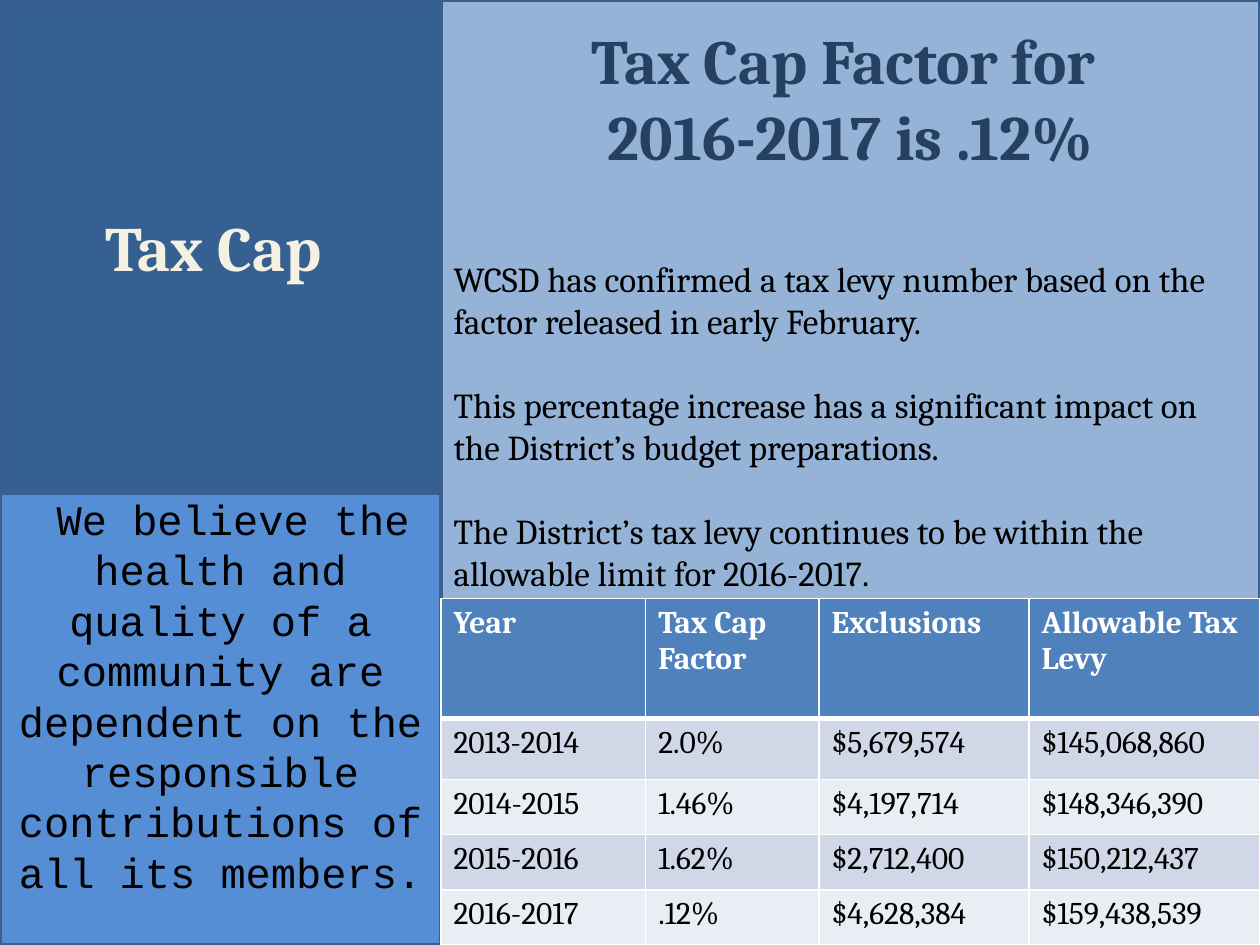
from lxml.etree import SubElement
from pptx import Presentation
from pptx.dml.color import RGBColor
from pptx.enum.shapes import MSO_SHAPE
from pptx.enum.text import MSO_ANCHOR, MSO_AUTO_SIZE, PP_ALIGN
from pptx.oxml.ns import qn
from pptx.util import Pt

COLORS = {
    "navy": "376092",
    "sky": "95B3D7",
    "blue": "558ED5",
    "outline": "3A5F8C",
    "cream": "F4F1E3",
    "heading": "254061",
    "text": "000000",
    "white": "FFFFFF",
    "header": "4F81BD",
    "odd_row": "D0D8E8",
    "even_row": "E9EDF4",
}
SERIF = "Cambria"
MONOSPACE = "Courier New"

HEADING = ["Tax Cap Factor for ", "2016-2017 is .12%"]
STATEMENTS = [
    "WCSD has confirmed a tax levy number based on the factor released in early February.",
    "This percentage increase has a significant impact on the District’s budget preparations.",
    "The District’s tax levy continues to be within the allowable limit for 2016-2017.",
]
BELIEF = (
    " We believe the health and quality of a community are dependent on the "
    "responsible contributions of all its members."
)
LEVY_ROWS = [
    ["Year", "Tax Cap Factor", "Exclusions", "Allowable Tax Levy"],
    ["2013-2014", "2.0%", "$5,679,574", "$145,068,860"],
    ["2014-2015", "1.46%", "$4,197,714", "$148,346,390"],
    ["2015-2016", "1.62%", "$2,712,400", "$150,212,437"],
    ["2016-2017", ".12%", "$4,628,384", "$159,438,539"],
]
COLUMN_WIDTHS = [117, 99, 120, 132]
ROW_HEIGHTS = [68.5, 35, 31.5, 31.5, 31.5]


def rgb(name):
    return RGBColor.from_string(COLORS[name])


def place_panel(shape, box, fill, anchor, top_inset):
    """Move a shape into its box and give it the panel look."""
    shape.left, shape.top, shape.width, shape.height = map(Pt, box)
    shape.fill.solid()
    shape.fill.fore_color.rgb = rgb(fill)
    shape.line.color.rgb = rgb("outline")
    shape.line.width = Pt(2)
    frame = shape.text_frame
    frame.word_wrap = True
    frame.auto_size = MSO_AUTO_SIZE.NONE
    frame.vertical_anchor = anchor
    frame.margin_top = Pt(top_inset)
    return frame


def add_run(paragraph, text, size, color, font=SERIF, bold=False):
    run = paragraph.add_run()
    run.text = text
    run.font.name = font
    run.font.size = Pt(size)
    run.font.bold = bold
    run.font.color.rgb = rgb(color)


def remove_bullet(paragraph):
    properties = paragraph._p.get_or_add_pPr()
    properties.set("marL", "0")
    properties.set("indent", "0")
    SubElement(properties, qn("a:buNone"))


def build_topic(slide, box):
    frame = place_panel(slide.shapes.title, box, "navy", MSO_ANCHOR.MIDDLE, 3.6)
    paragraph = frame.paragraphs[0]
    paragraph.alignment = PP_ALIGN.CENTER
    add_run(paragraph, "Tax Cap ", 36, "cream", bold=True)


def build_message(slide, box):
    frame = place_panel(slide.placeholders[1], box, "sky", MSO_ANCHOR.TOP, 12.5)
    for index, text in enumerate(HEADING + STATEMENTS):
        paragraph = frame.paragraphs[0] if index == 0 else frame.add_paragraph()
        paragraph.space_before = Pt(0)
        remove_bullet(paragraph)
        if index < len(HEADING):
            paragraph.alignment = PP_ALIGN.CENTER
            add_run(paragraph, text, 36, "heading", bold=True)
        else:
            paragraph.alignment = PP_ALIGN.LEFT
            paragraph.space_before = Pt(48 if index == len(HEADING) else 24)
            add_run(paragraph, text, 20, "text")


def build_belief(slide, box):
    shape = slide.shapes.add_shape(MSO_SHAPE.RECTANGLE, *map(Pt, box))
    shape.shadow.inherit = False
    frame = place_panel(shape, box, "blue", MSO_ANCHOR.TOP, 0)
    paragraph = frame.paragraphs[0]
    paragraph.alignment = PP_ALIGN.CENTER
    add_run(paragraph, BELIEF, 24, "text", font=MONOSPACE)


def set_borders(cell, bottom_width):
    """Draw white cell borders, placed before the fill as the schema asks."""
    properties = cell._tc.get_or_add_tcPr()
    for position, side in enumerate(("lnL", "lnR", "lnT", "lnB")):
        width = bottom_width if side == "lnB" else 1
        line = SubElement(properties, qn(f"a:{side}"), w=str(Pt(width)))
        fill = SubElement(line, qn("a:solidFill"))
        SubElement(fill, qn("a:srgbClr"), val=COLORS["white"])
        properties.insert(position, line)


def build_levy_table(slide, box):
    table = slide.shapes.add_table(
        len(LEVY_ROWS), len(COLUMN_WIDTHS), *map(Pt, box)
    ).table
    for column, width in zip(table.columns, COLUMN_WIDTHS):
        column.width = Pt(width)
    for row_index, (row, height) in enumerate(zip(table.rows, ROW_HEIGHTS)):
        row.height = Pt(height)
        is_header = row_index == 0
        fill = "header" if is_header else ("even_row", "odd_row")[row_index % 2]
        for cell, text in zip(row.cells, LEVY_ROWS[row_index]):
            cell.fill.solid()
            cell.fill.fore_color.rgb = rgb(fill)
            set_borders(cell, 3 if row_index == 0 else 1)
            if row_index == 1:
                cell._tc.tcPr.find(qn("a:lnT")).set("w", str(Pt(3)))
            color = "white" if is_header else "text"
            add_run(cell.text_frame.paragraphs[0], text, 18, color, bold=is_header)


def main():
    presentation = Presentation()
    presentation.slide_width = Pt(720)
    presentation.slide_height = Pt(540)
    slide = presentation.slides.add_slide(presentation.slide_layouts[1])
    build_topic(slide, (0, 0, 252, 282))
    build_message(slide, (252, 0, 468, 540))
    build_belief(slide, (0, 282, 252, 258))
    build_levy_table(slide, (252, 342, 468, 198))
    presentation.save("out.pptx")


if __name__ == "__main__":
    main()
